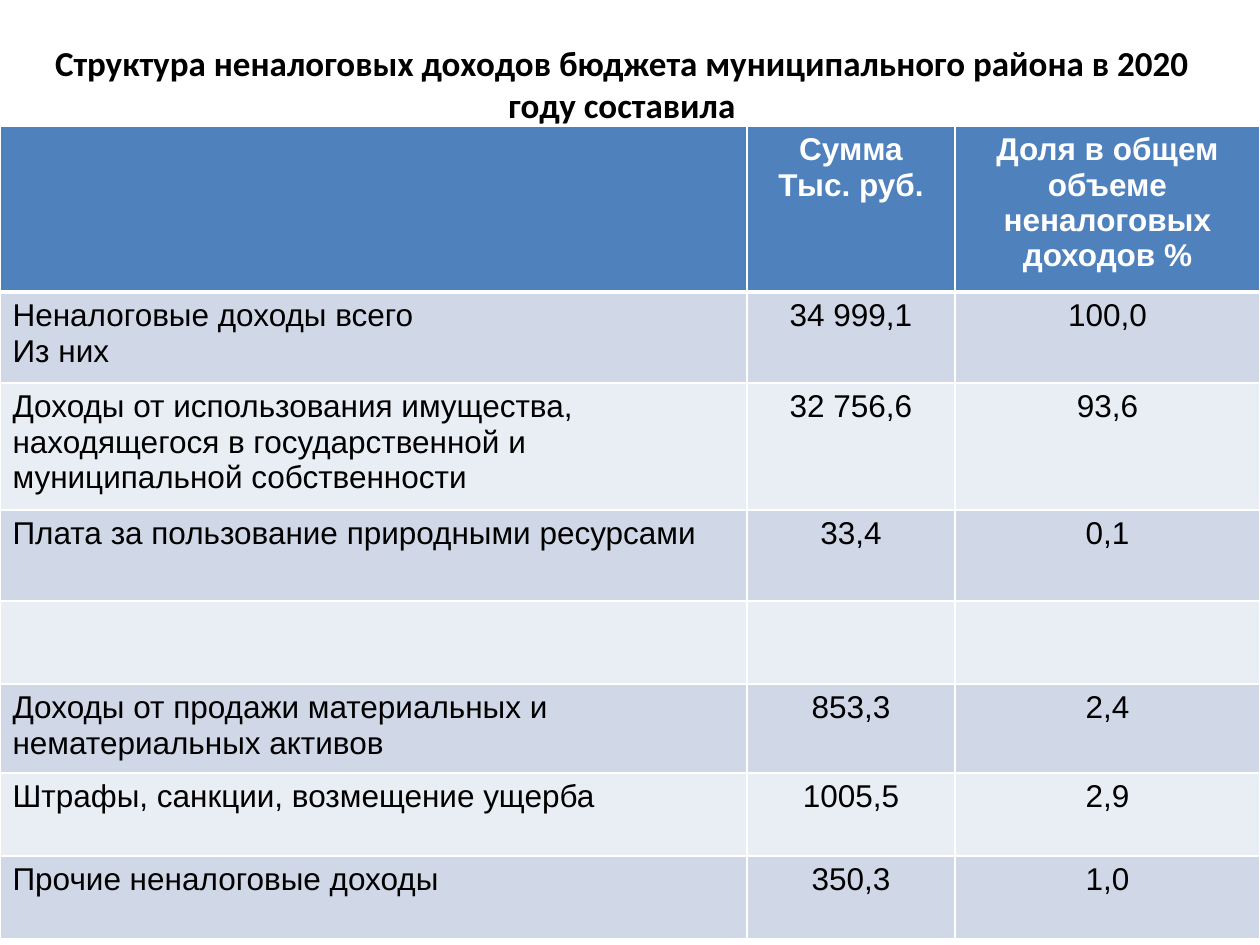
import pptx
import pptx.util
import pptx.dml.color
import pptx.enum.text
import pptx.oxml.ns
import lxml.etree
from dataclasses import dataclass

ALIGN = pptx.enum.text.PP_ALIGN
ANCHOR = pptx.enum.text.MSO_ANCHOR


@dataclass(frozen=True)
class Theme:
    head: str = "4F81BD"
    odd: str = "D0D8E8"
    even: str = "E9EDF4"
    ink: str = "000000"
    white: str = "FFFFFF"
    title_font: str = "Calibri"
    body_font: str = "Arial"
    title_size: int = 20
    body_size: int = 18
    thin: int = 1
    thick: int = 3


THEME = Theme()
TITLE = "Структура неналоговых доходов бюджета муниципального района в 2020 году составила"
COLS = [747, 208, 305]
HEIGHTS = [166, 91, 127, 91, 83, 89, 83, 83]
ROWS = [
    ("", "Сумма\nТыс. руб.", "Доля в общем объеме неналоговых доходов %"),
    ("Неналоговые доходы всего\nИз них", "34 999,1", "100,0"),
    ("Доходы от использования имущества, находящегося в государственной и "
     "муниципальной собственности", "32 756,6", "93,6"),
    ("Плата за пользование природными ресурсами", "33,4", "0,1"),
    ("", "", ""),
    ("Доходы от продажи материальных и нематериальных активов", "853,3", "2,4"),
    ("Штрафы, санкции, возмещение ущерба", "1005,5", "2,9"),
    ("Прочие неналоговые доходы", "350,3", "1,0"),
]


def px(count):
    return pptx.util.Emu(round(count * 914400 / 126))


def color(code):
    return pptx.dml.color.RGBColor.from_string(code)


def write(frame, text, *, size=THEME.body_size, face=THEME.body_font,
          ink=THEME.ink, bold=False, align=ALIGN.LEFT):
    frame.text = text
    frame.word_wrap = True
    for para in frame.paragraphs:
        para.alignment = align
        font = para.font
        font.size = pptx.util.Pt(size)
        font.name = face
        font.bold = bold
        font.color.rgb = color(ink)


def edge(cell, side, width):
    line = lxml.etree.SubElement(
        cell._tc.get_or_add_tcPr(), pptx.oxml.ns.qn("a:ln" + side),
        w=str(pptx.util.Pt(width)))
    fill = lxml.etree.SubElement(line, pptx.oxml.ns.qn("a:solidFill"))
    lxml.etree.SubElement(fill, pptx.oxml.ns.qn("a:srgbClr"), val=THEME.white)


def add_title(slide):
    title = slide.shapes.title
    title.left, title.top, title.width, title.height = map(px, (42, 42, 1160, 84))
    frame = title.text_frame
    frame.margin_left = frame.margin_top = frame.margin_right = frame.margin_bottom = 0
    frame.vertical_anchor = ANCHOR.BOTTOM
    write(frame, TITLE, size=THEME.title_size, face=THEME.title_font,
          bold=True, align=ALIGN.CENTER)


def style_cell(cell, text, row, col):
    head = row == 0
    write(cell.text_frame, text, ink=THEME.white if head else THEME.ink, bold=head,
          align=ALIGN.CENTER if head or col else ALIGN.LEFT)
    for side in "LRTB":
        rule = (row, side) in ((0, "B"), (1, "T"))
        edge(cell, side, THEME.thick if rule else THEME.thin)
    cell.fill.solid()
    cell.fill.fore_color.rgb = color(
        THEME.head if head else THEME.odd if row % 2 else THEME.even)


def add_income(slide):
    table = slide.shapes.add_table(
        len(ROWS), len(COLS), 0, px(126), px(sum(COLS)), px(sum(HEIGHTS))).table
    for col, width in zip(table.columns, COLS):
        col.width = px(width)
    for row, height in zip(table.rows, HEIGHTS):
        row.height = px(height)
    for row, texts in enumerate(ROWS):
        for col, text in enumerate(texts):
            style_cell(table.cell(row, col), text, row, col)


def main():
    deck = pptx.Presentation()
    deck.slide_width, deck.slide_height = px(1260), px(945)
    slide = deck.slides.add_slide(deck.slide_layouts[5])
    add_title(slide)
    add_income(slide)
    deck.save("out.pptx")


if __name__ == "__main__":
    main()
